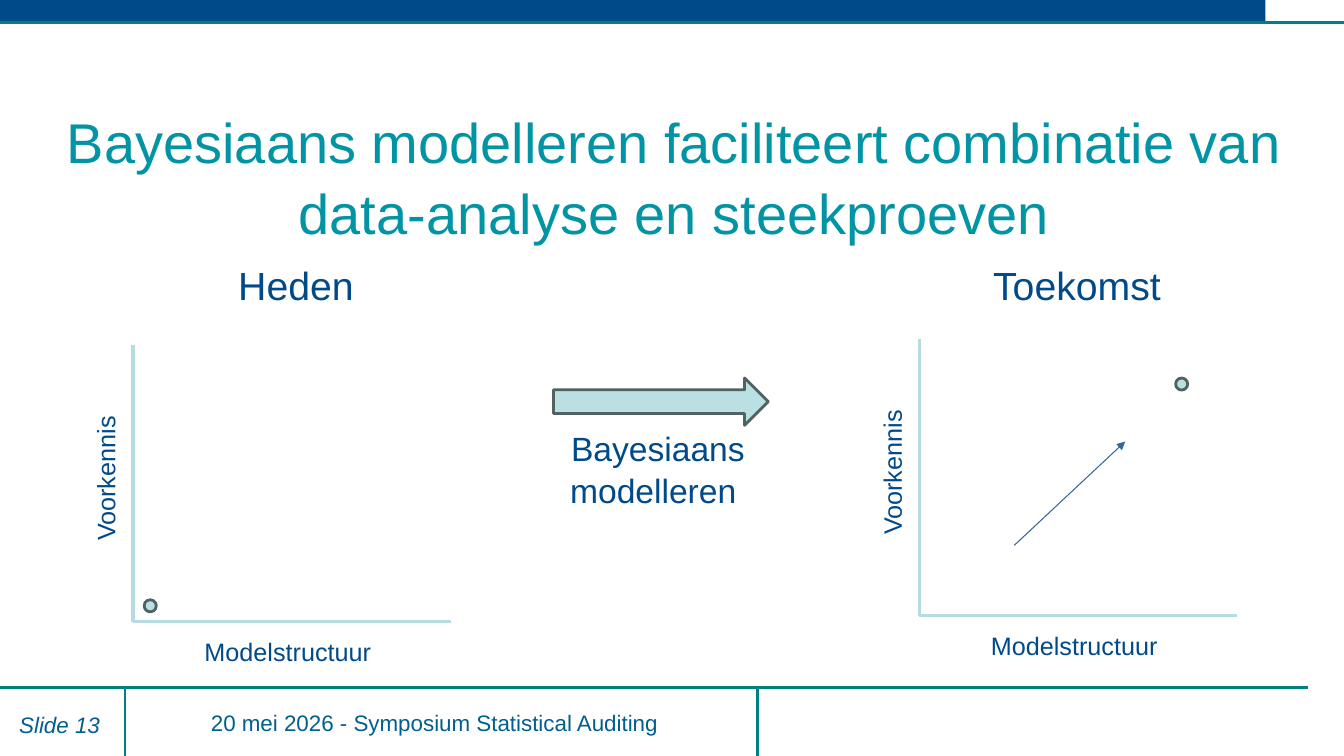
from lxml.etree import SubElement
from pptx import Presentation
from pptx.dml.color import RGBColor
from pptx.enum.shapes import MSO_CONNECTOR, MSO_SHAPE
from pptx.enum.text import MSO_ANCHOR, MSO_AUTO_SIZE, PP_ALIGN
from pptx.oxml.ns import qn
from pptx.util import Inches, Pt

COLORS = {
    "rule": "008080", "navy": "004A8A", "title": "0094A4", "footer": "005F8E",
    "fill": "BBE0E3", "outline": "526263", "axis": "B6DCDF", "trend": "336699",
}


def color(name):
    return RGBColor.from_string(COLORS[name])


def add_text(slide, box, text, size, ink="navy", align=PP_ALIGN.CENTER,
             wrap=True, anchor=MSO_ANCHOR.TOP, italic=False, spacing=None):
    label = slide.shapes.add_textbox(*map(Inches, box))
    frame = label.text_frame
    frame_format = {
        "word_wrap": wrap,
        "vertical_anchor": anchor,
        "auto_size": MSO_AUTO_SIZE.NONE if wrap else MSO_AUTO_SIZE.SHAPE_TO_FIT_TEXT,
    }
    for name, value in frame_format.items():
        setattr(frame, name, value)
    paragraph = frame.paragraphs[0]
    paragraph.alignment = align
    paragraph.line_spacing = spacing
    run = paragraph.add_run()
    run.text = text
    font_format = {"name": "Arial", "size": Pt(size), "italic": italic}
    for name, value in font_format.items():
        setattr(run.font, name, value)
    run.font.color.rgb = color(ink)
    return label


def add_line(slide, start, end, ink, width, arrowhead=False):
    line = slide.shapes.add_connector(
        MSO_CONNECTOR.STRAIGHT, *map(Inches, (*start, *end)))
    line.line.color.rgb = color(ink)
    line.line.width = Pt(width)
    if arrowhead:
        SubElement(line.line._get_or_add_ln(), qn("a:tailEnd"), type="triangle")
    SubElement(line._element.spPr, qn("a:effectLst"))


def add_figure(slide, kind, box, fill="fill", outline="outline"):
    figure = slide.shapes.add_shape(kind, *map(Inches, box))
    figure.shadow.inherit = False
    figure.fill.solid()
    figure.fill.fore_color.rgb = color(fill)
    if outline:
        figure.line.color.rgb = color(outline)
        figure.line.width = Pt(2)
    else:
        figure.line.fill.background()


def add_header(slide, width):
    add_figure(slide, MSO_SHAPE.RECTANGLE, (0, 0, 12.55, 0.23), "navy", None)
    add_line(slide, (0, 0.22), (width, 0.22), "rule", 2)


def add_footer(slide, top, bottom):
    add_line(slide, (0, top), (12.97, top), "rule", 2)
    for divider in (1.24, 7.51):
        add_line(slide, (divider, top), (divider, bottom), "rule", 2)
    add_text(slide, (1.1, top + 0.17, 6.48, 0.36),
             "20 mei 2026 - Symposium Statistical Auditing ", 16, "footer")
    add_text(slide, (-0.33, top + 0.19, 1.42, 0.34), "Slide 13", 16, "footer",
             PP_ALIGN.RIGHT, italic=True)


def add_model_plot(slide, box, heading, heading_left, dot):
    left, top, width, height = box
    bottom = top + height
    add_text(slide, (heading_left, 2.54, 4.49, 0.55), heading, 28)

    # Axes and their labels
    add_line(slide, (left, top), (left, bottom), "axis", 2.25)
    add_line(slide, (left, bottom), (left + width, bottom), "axis", 2.25)
    knowledge = add_text(slide, (left - 1, top + 1.12, 1.45, 0.4), "Voorkennis",
                         18, align=PP_ALIGN.LEFT, wrap=False)
    knowledge.rotation = 270
    add_text(slide, (left + 0.61, bottom + 0.09, 1.87, 0.4), "Modelstructuur",
             18, align=PP_ALIGN.LEFT, wrap=False)

    # Position within the plot
    add_figure(slide, MSO_SHAPE.OVAL, (left + dot[0], top + dot[1], 0.12, 0.12))


def add_transition(slide, left, top):
    add_figure(slide, MSO_SHAPE.RIGHT_ARROW, (left, top, 2.13, 0.47))
    add_text(slide, (left - 0.4, top + 0.43, 2.87, 0.95),
             "Bayesiaans modelleren ", 24, spacing=1.04)


def main():
    deck = Presentation()
    width, height = 13.33, 7.5
    deck.slide_width, deck.slide_height = Inches(width), Inches(height)
    slide = deck.slides.add_slide(deck.slide_layouts[6])

    add_footer(slide, 6.82, height)
    add_header(slide, width)
    add_text(slide, (0.38, 1.23, 12.6, 1.01),
             "Bayesiaans modelleren faciliteert combinatie van "
             "data-analyse en steekproeven", 40, "title",
             anchor=MSO_ANCHOR.MIDDLE, spacing=1.05)

    # Present, transition and future
    add_model_plot(slide, (1.32, 3.42, 3.15, 2.75), "Heden", 0.69, (0.11, 2.53))
    add_transition(slide, 5.49, 3.75)
    add_model_plot(slide, (9.12, 3.36, 3.15, 2.75), "Toekomst ", 8.49, (2.54, 0.39))
    add_line(slide, (10.06, 5.41), (11.16, 4.38), "trend", 0.75, arrowhead=True)

    deck.save("out.pptx")


if __name__ == "__main__":
    main()
